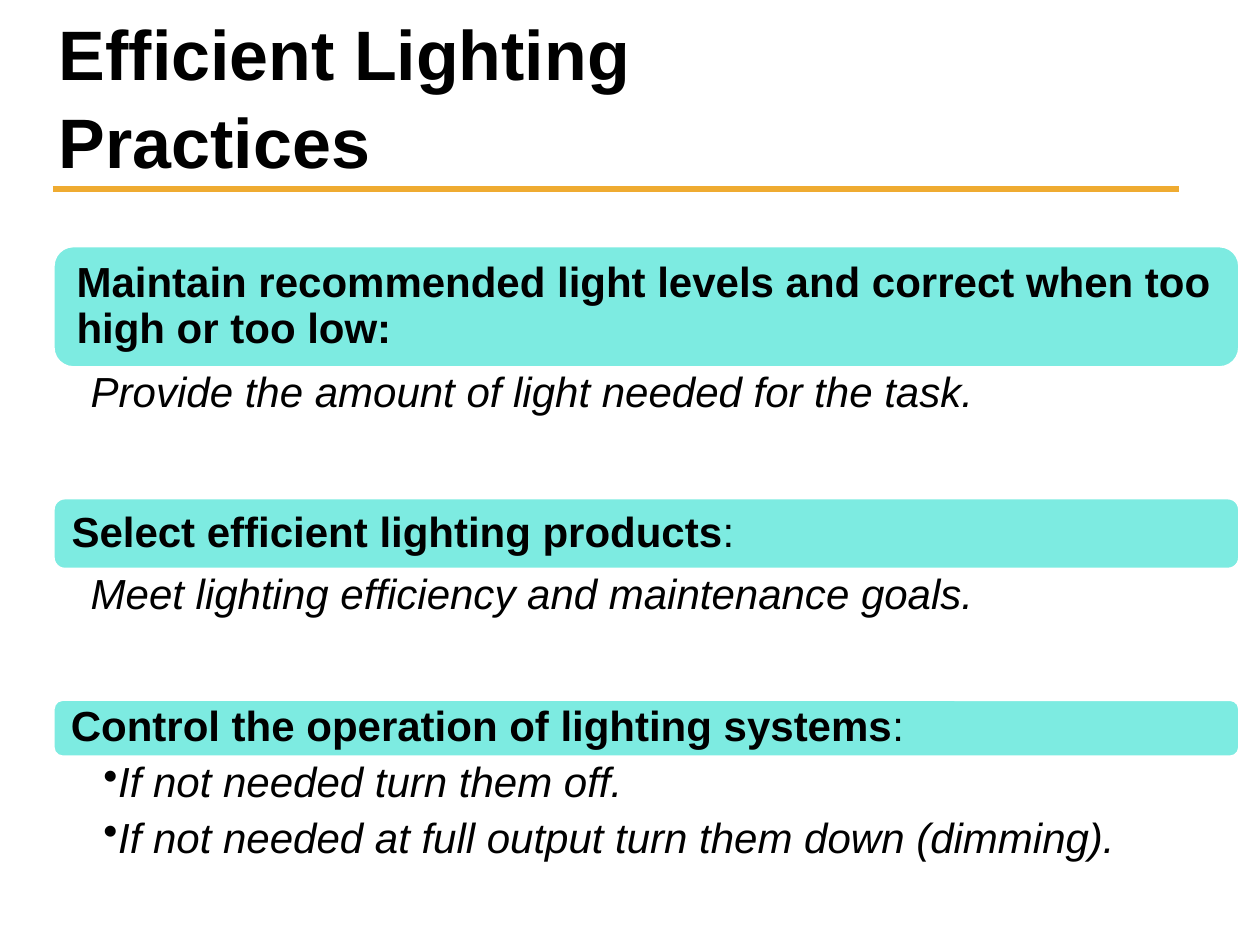
import dataclasses
import typing

import lxml.etree
import pptx
import pptx.dml.color
import pptx.enum.shapes
import pptx.enum.text
import pptx.oxml.ns
import pptx.util

RGB = pptx.dml.color.RGBColor
Pt = pptx.util.Pt
Anchor = pptx.enum.text.MSO_ANCHOR
BLACK = RGB(0x00, 0x00, 0x00)
WHITE = RGB(0xFF, 0xFF, 0xFF)
AQUA = RGB(0x7D, 0xEB, 0xE1)
GOLD = RGB(0xEF, 0xAB, 0x31)

WIDE, HIGH = pptx.util.Inches(10), pptx.util.Inches(7.5)
COLS, ROWS = 100, 75
LEFT, SPAN = 4.2, 94.2  # columns shared by bars and notes
TOP, NOTE_ROWS = 19.5, 10.3


@dataclasses.dataclass(frozen=True)
class Topic:
    head: str
    tail: str
    rows: float
    notes: tuple[str, ...]
    inset: float = 1.2
    bullet: bool = False


TOPICS = (
    Topic("Maintain recommended light levels and correct when too high or too low:", "",
          9.7, ("Provide the amount of light needed for the task.",), inset=1.4),
    Topic("Select efficient lighting products", ":",
          5.7, ("Meet lighting efficiency and maintenance goals.",)),
    Topic("Control the operation of lighting systems", ":",
          4.6, ("If not needed turn them off.",
                "If not needed at full output turn them down (dimming)."), bullet=True),
)


def col(count: float) -> int:
    return round(WIDE * count / COLS)


def row(count: float) -> int:
    return round(HIGH * count / ROWS)


def area(left: float, top: float, cols: float, rows: float) -> tuple[int, ...]:
    return col(left), row(top), col(cols), row(rows)


def put_text(shape: typing.Any, paras: typing.Sequence[typing.Sequence[str]], *,
             size: float = 24, bold: bool = False, italic: bool = False,
             space: float = 0.9, after: float = 0, bullet: bool = False,
             anchor: Anchor = Anchor.MIDDLE,
             inset: tuple[float, float, float, float] = (1, 0, 1, 0)) -> None:
    """Fill a shape; each paragraph is a list of runs, and only its first can be bold."""
    frame = shape.text_frame
    frame.word_wrap = True
    frame.vertical_anchor = anchor
    left, top, right, base = inset
    frame.margin_left, frame.margin_right = col(left), col(right)
    frame.margin_top, frame.margin_bottom = row(top), row(base)
    for num, runs in enumerate(paras):
        para = frame.paragraphs[0] if num == 0 else frame.add_paragraph()
        para.alignment = pptx.enum.text.PP_ALIGN.LEFT
        para.line_spacing = space
        para.space_after = Pt(after)
        if bullet:
            props = para._p.get_or_add_pPr()
            props.set("marL", str(col(1)))
            props.set("indent", "0")
            mark = lxml.etree.SubElement(props, pptx.oxml.ns.qn("a:buChar"))
            mark.set("char", "•")
        for place, words in enumerate(runs):
            run = para.add_run()
            run.text = words
            font = run.font
            font.name, font.size = "Arial", Pt(size)
            font.bold, font.italic = bold and place == 0, italic
            font.color.rgb = BLACK


def draw_rule(slide: typing.Any) -> None:
    line = slide.shapes.add_connector(pptx.enum.shapes.MSO_CONNECTOR.STRAIGHT,
                                      col(4.2), row(15), col(93.6), row(15))
    line.line.color.rgb = GOLD
    line.line.width = Pt(4)
    lxml.etree.SubElement(line._element.spPr, pptx.oxml.ns.qn("a:effectLst"))


def draw_topic(slide: typing.Any, topic: Topic, top: float) -> float:
    """Draw a bar with its notes and return the row where they end."""
    bar = slide.shapes.add_shape(pptx.enum.shapes.MSO_SHAPE.ROUNDED_RECTANGLE,
                                 *area(LEFT, top, SPAN, topic.rows))
    bar.shadow.inherit = False
    bar.fill.solid()
    bar.fill.fore_color.rgb = AQUA
    bar.line.color.rgb = WHITE
    bar.line.width = Pt(2)
    runs = [words for words in (topic.head, topic.tail) if words]
    put_text(bar, [runs], bold=True, inset=(topic.inset, 0, 1, 0))

    top += topic.rows
    notes = slide.shapes.add_textbox(*area(LEFT, top, SPAN, NOTE_ROWS))
    put_text(notes, [[note] for note in topic.notes], italic=True, after=6,
             bullet=topic.bullet, anchor=Anchor.TOP, inset=(3, 0.3, 1.9, 0.3))
    return top + NOTE_ROWS


def main() -> None:
    deck = pptx.Presentation()
    deck.slide_width, deck.slide_height = WIDE, HIGH
    slide = deck.slides.add_slide(deck.slide_layouts[6])
    draw_rule(slide)
    top = TOP
    for topic in TOPICS:
        top = draw_topic(slide, topic, top)
    title = slide.shapes.add_textbox(*area(3.7, 0, 71.3, 15))
    put_text(title, [["Efficient Lighting Practices"]], size=40, bold=True, space=1.05,
             anchor=Anchor.BOTTOM, inset=(1, 0.5, 1, 0.5))
    deck.save("out.pptx")


if __name__ == "__main__":
    main()
